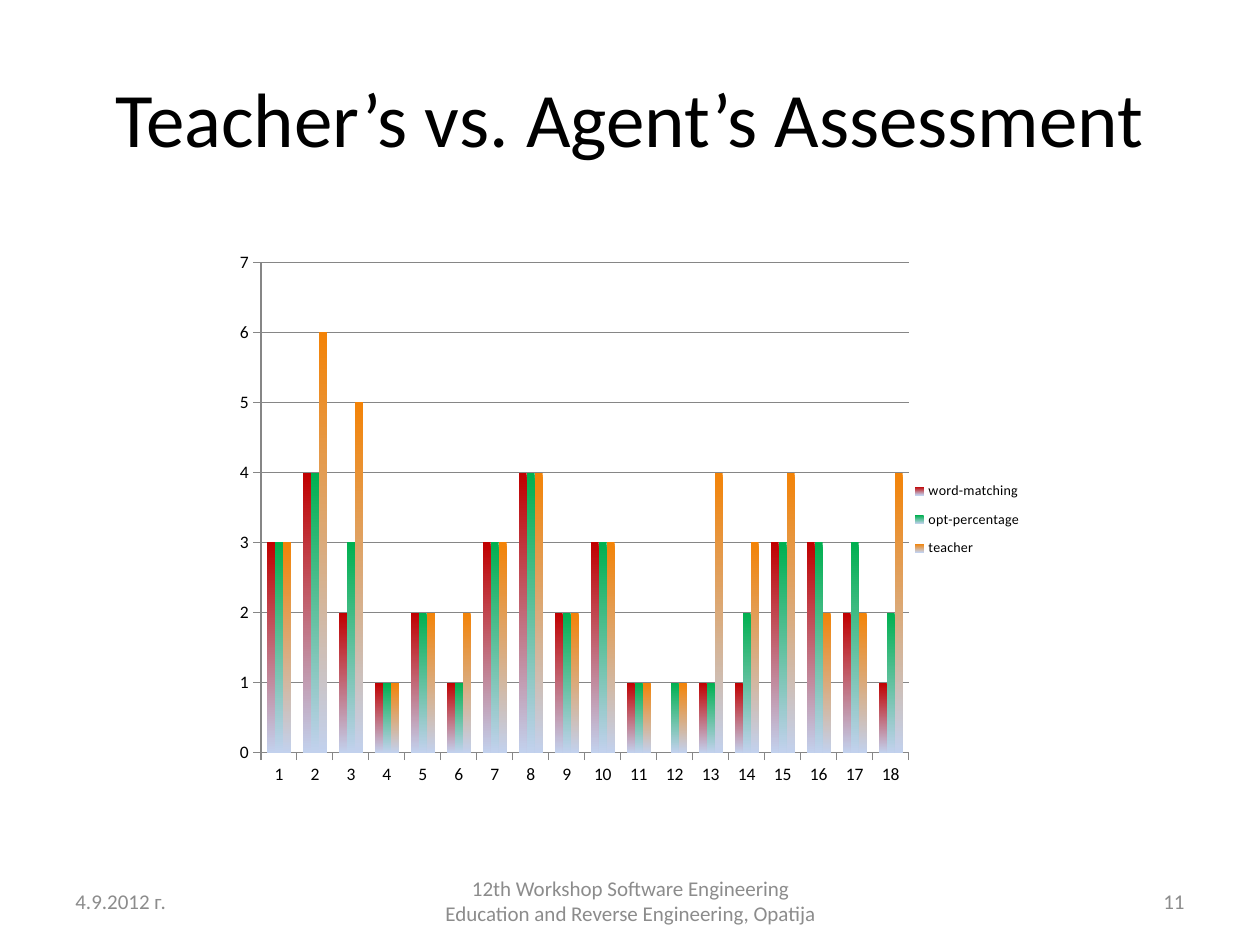
from lxml.etree import SubElement
from pptx import Presentation
from pptx.chart.data import CategoryChartData
from pptx.dml.color import RGBColor
from pptx.enum.chart import XL_CHART_TYPE, XL_LEGEND_POSITION, XL_TICK_MARK
from pptx.enum.text import MSO_ANCHOR, PP_ALIGN
from pptx.oxml.ns import qn
from pptx.util import Inches, Pt

FONT = "Calibri"
BLACK, GREY, AXIS_GREY, BAR_BASE = "000000", "8C8C8C", "868686", "C2D1ED"
WIDTH, HEIGHT, MARGIN = 10, 7.5, 0.5
TITLE = "Teacher’s vs. Agent’s Assessment"
ASSESSMENTS = [
    ("word-matching", "C00000", (3, 4, 2, 1, 2, 1, 3, 4, 2, 3, 1, 0, 1, 1, 3, 3, 2, 1)),
    ("opt-percentage", "00B050", (3, 4, 3, 1, 2, 1, 3, 4, 2, 3, 1, 1, 1, 2, 3, 3, 3, 2)),
    ("teacher", "F38307", (3, 6, 5, 1, 2, 2, 3, 4, 2, 3, 1, 1, 4, 3, 4, 2, 2, 4)),
]
FOOTERS = [
    ("4.9.2012 г.", MARGIN, 2.33, PP_ALIGN.LEFT),
    ("12th Workshop Software Engineering Education and Reverse Engineering, Opatija",
     3.42, 3.17, PP_ALIGN.CENTER),
    ("11", 7.17, 2.33, PP_ALIGN.RIGHT),
]
CHART_BOX = (1.85, 1.98, 6.3, 4.29)
PLOT_SHARE = (0.035, 0.024, 0.816, 0.907)
LEGEND_SHARE = (0.85, 0.41, 0.15, 0.18)


def rgb(value):
    """Turn a hex string into a colour."""
    return RGBColor.from_string(value)


def style_font(font, size, color):
    """Apply the slide's typeface with a size and colour."""
    font.name, font.size, font.color.rgb = FONT, Pt(size), rgb(color)


def place(shape, left, top, width, height):
    """Move and size a shape in inches."""
    shape.left, shape.top, shape.width, shape.height = map(Inches, (left, top, width, height))


def write(shape, text, size, color, align):
    """Set and format one vertically centred paragraph."""
    frame = shape.text_frame
    frame.text, frame.word_wrap, frame.vertical_anchor = text, True, MSO_ANCHOR.MIDDLE
    paragraph = frame.paragraphs[0]
    paragraph.alignment = align
    style_font(paragraph.runs[0].font, size, color)


def manual_layout(parent, index, shares, inner=False):
    """Fix a chart part at shares of the chart's size."""
    for old in parent.findall(qn("c:layout")):
        parent.remove(old)
    layout = SubElement(parent, qn("c:layout"))
    parent.insert(index, layout)
    manual = SubElement(layout, qn("c:manualLayout"))
    settings = [("layoutTarget", "inner")] if inner else []
    settings += [("xMode", "edge"), ("yMode", "edge"), *zip("xywh", shares)]
    for tag, value in settings:
        SubElement(manual, qn(f"c:{tag}")).set("val", str(value))


def add_assessment_chart(slide):
    """Add the clustered columns with gradient fills."""
    scores = CategoryChartData()
    scores.categories = [str(n + 1) for n in range(len(ASSESSMENTS[0][2]))]
    for name, _, values in ASSESSMENTS:
        scores.add_series(name, values)
    chart = slide.shapes.add_chart(
        XL_CHART_TYPE.COLUMN_CLUSTERED, *map(Inches, CHART_BOX), scores).chart
    chart.has_title = False
    style_font(chart.font, 10, BLACK)

    columns = chart.plots[0]
    columns.gap_width, columns.overlap, columns.vary_by_categories = 150, 0, False
    for series, (_, color, _) in zip(columns.series, ASSESSMENTS):
        fill = series.format.fill
        fill.gradient()
        fill.gradient_angle = 270
        for stop, shade, position in zip(fill.gradient_stops, (color, BAR_BASE), (0, 1)):
            stop.color.rgb, stop.position = rgb(shade), position

    scale = chart.value_axis
    scale.minimum_scale, scale.maximum_scale, scale.major_unit = 0, 7, 1
    scale.has_major_gridlines = True
    for axis in (chart.category_axis, scale):
        axis.major_tick_mark = XL_TICK_MARK.OUTSIDE
        style_font(axis.tick_labels.font, 10, BLACK)
    for part in (chart.category_axis, scale, scale.major_gridlines):
        part.format.line.color.rgb = rgb(AXIS_GREY)
        part.format.line.width = Pt(0.75)

    chart.has_legend = True
    legend = chart.legend
    legend.position, legend.include_in_layout = XL_LEGEND_POSITION.RIGHT, False
    style_font(legend.font, 8, BLACK)
    plot_area = chart.element.find(".//" + qn("c:plotArea"))
    manual_layout(plot_area, 0, PLOT_SHARE, inner=True)
    manual_layout(chart.element.find(".//" + qn("c:legend")), 1, LEGEND_SHARE)


def main():
    """Build and save the slide."""
    deck = Presentation()
    deck.slide_width, deck.slide_height = Inches(WIDTH), Inches(HEIGHT)
    slide = deck.slides.add_slide(deck.slide_layouts[5])
    title = slide.shapes.title
    place(title, MARGIN, 0.3, WIDTH - 2 * MARGIN, 1.25)
    write(title, TITLE, 44, BLACK, PP_ALIGN.CENTER)
    for text, left, width, align in FOOTERS:
        footer = slide.shapes.add_textbox(*map(Inches, (left, 6.95, width, 0.4)))
        write(footer, text, 12, GREY, align)
    add_assessment_chart(slide)
    deck.save("out.pptx")


if __name__ == "__main__":
    main()
